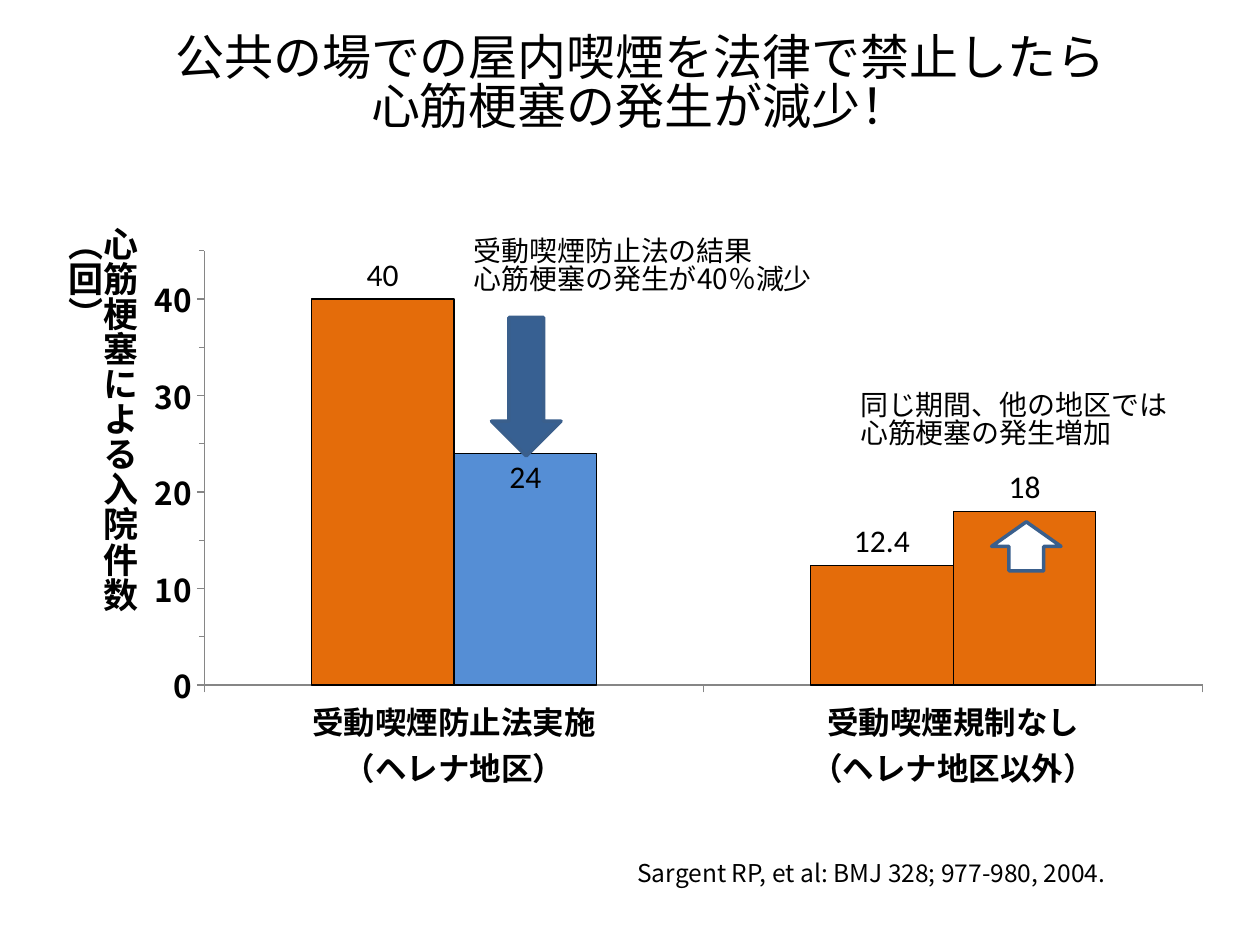
from lxml.etree import SubElement
from pptx import Presentation
from pptx.chart.data import CategoryChartData
from pptx.dml.color import RGBColor
from pptx.enum.chart import XL_CHART_TYPE, XL_LABEL_POSITION, XL_TICK_MARK
from pptx.enum.shapes import MSO_SHAPE
from pptx.enum.text import MSO_ANCHOR, PP_ALIGN
from pptx.oxml import parse_xml
from pptx.oxml.ns import nsdecls, qn
from pptx.util import Cm, Pt

INK = {
    "black": "000000", "white": "FFFFFF", "grey": "868686",
    "orange": "E46C0A", "blue": "558ED5", "navy": "376092",
    "edge": "3A5F8C", "first": "4F81BD", "second": "8EB4E3",
}
FACE = "Noto Sans CJK JP"


def color(name):
    return RGBColor.from_string(INK[name])


def write(frame, text, size=16, bold=False, align=PP_ALIGN.LEFT,
          anchor=MSO_ANCHOR.TOP, spacing=0.83):
    """Fill a text frame; a newline starts a paragraph, a \\v breaks a line."""
    frame.word_wrap = True
    frame.vertical_anchor = anchor
    frame.text = text
    for para in frame.paragraphs:
        para.alignment = align
        para.line_spacing = spacing
        for run in para.runs:
            run.font.size = Pt(size)
            run.font.bold = bold
            run.font.color.rgb = color("black")
            run.font.name = FACE
            SubElement(run._r.get_or_add_rPr(), qn("a:ea"), typeface=FACE)


deck = Presentation()
deck.slide_width, deck.slide_height = Cm(25.4), Cm(19.05)
slide = deck.slides.add_slide(deck.slide_layouts[0])
shapes = slide.shapes
sub = slide.placeholders[1].element
sub.getparent().remove(sub)

# Title
title = shapes.title
title.left, title.top = Cm(2.11), Cm(0.53)
title.width, title.height = Cm(21.59), Cm(2.39)
write(title.text_frame,
      "公共の場での屋内喫煙を法律で禁止したら\v心筋梗塞の発生が減少！",
      size=28, align=PP_ALIGN.CENTER, anchor=MSO_ANCHOR.MIDDLE)

# Chart
data = CategoryChartData()
data.categories = ["受動喫煙防止法実施\n（ヘレナ地区）",
                   "受動喫煙規制なし\n（ヘレナ地区以外）"]
data.add_series("Series 1", (40, 12.4))
data.add_series("Series 2", (24, 18))
chart = shapes.add_chart(XL_CHART_TYPE.COLUMN_CLUSTERED, Cm(2.69), Cm(4.83),
                         Cm(22), Cm(11.28), data).chart
chart.has_legend = chart.has_title = False
chart.font.size = Pt(18)
chart.font.name = "Calibri"
chart.font.color.rgb = color("black")

area = chart._chartSpace.chart.plotArea
for old in area.findall(qn("c:layout")):
    area.remove(old)
area.insert(0, parse_xml(
    f'<c:layout {nsdecls("c")}><c:manualLayout><c:layoutTarget val="inner"/>'
    '<c:xMode val="edge"/><c:yMode val="edge"/><c:x val="0.065"/>'
    '<c:y val="0.02"/><c:w val="0.915"/><c:h val="0.776"/>'
    '</c:manualLayout></c:layout>'))

for axis in (chart.category_axis, chart.value_axis):
    axis.has_major_gridlines = False
    axis.major_tick_mark = XL_TICK_MARK.OUTSIDE
    axis.format.line.color.rgb = color("grey")
    font = axis.tick_labels.font
    font.size, font.bold = Pt(18), True
    font.color.rgb = color("black")
    font.name = FACE
    SubElement(font._rPr, qn("a:ea"), typeface=FACE)
scale = chart.value_axis
scale.minimum_scale, scale.maximum_scale = 0, 45
scale.major_unit, scale.minor_unit = 10, 5
scale.minor_tick_mark = XL_TICK_MARK.OUTSIDE

plot = chart.plots[0]
plot.gap_width, plot.overlap = 150, 0
plot.vary_by_categories = False
fills = [("first", "orange", "orange"), ("second", "blue", "orange")]
for series, (base, *tints) in zip(plot.series, fills):
    bars = [series.points[i] for i in range(len(tints))]
    for part, tint in zip([series, *bars], [base, *tints]):
        part.format.fill.solid()
        part.format.fill.fore_color.rgb = color(tint)
        part.format.line.color.rgb = color("black")
        part.format.line.width = Pt(0.75)
    labels = series.data_labels
    labels.show_value = True
    labels.position = XL_LABEL_POSITION.OUTSIDE_END
drop = plot.series[1].points[0].data_label
drop.position = XL_LABEL_POSITION.INSIDE_END

# Arrows
for kind, left, top, height, tint in [
        (MSO_SHAPE.DOWN_ARROW, 9.91, 6.4, 2.79, "navy"),
        (MSO_SHAPE.UP_ARROW, 19.99, 10.52, 0.99, "white")]:
    arrow = shapes.add_shape(kind, Cm(left), Cm(top), Cm(1.4), Cm(height))
    arrow.shadow.inherit = False
    arrow.fill.solid()
    arrow.fill.fore_color.rgb = color(tint)
    arrow.line.color.rgb = color("edge")
    arrow.line.width = Pt(2)

# Notes, axis name and source
for text, box, style in [
        ("受動喫煙防止法の結果\n心筋梗塞の発生が40％減少",
         (9.3, 4.7, 7.34, 1.63), {}),
        ("同じ期間、他の地区では\n心筋梗塞の発生増加",
         (17.09, 7.8, 6.78, 1.63), {}),
        ("心筋梗塞による入院件数（回）",
         (1.45, 4.32, 1.37, 10.21), {"size": 20, "bold": True}),
        ("Sargent RP, et al: BMJ 328; 977-980, 2004.",
         (12.6, 17.27, 12.7, 0.86), {"size": 14})]:
    note = shapes.add_textbox(*map(Cm, box))
    write(note.text_frame, text, **style)
    if box[3] > box[2]:
        note.text_frame._txBody.bodyPr.set("vert", "eaVert")

deck.save("out.pptx")
